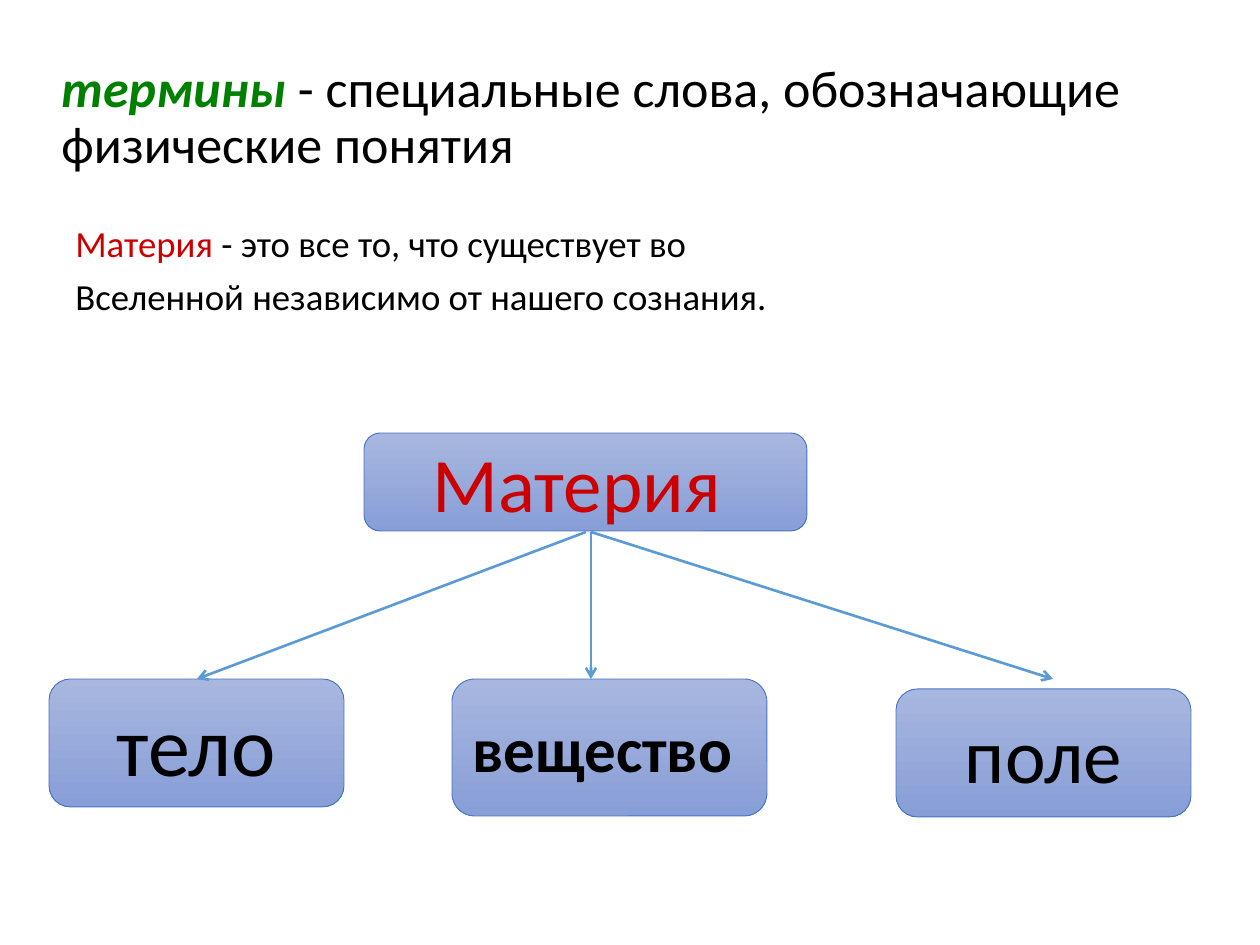
from lxml.etree import SubElement
from pptx import Presentation
from pptx.dml.color import RGBColor
from pptx.enum.shapes import MSO_CONNECTOR, MSO_SHAPE
from pptx.enum.text import MSO_ANCHOR, PP_ALIGN
from pptx.oxml.ns import qn
from pptx.util import Emu, Pt

PX = 914400 // 126
COLORS = {
    "black": "000000", "green": "008000", "red": "CC0000",
    "top": "A8B7DF", "bottom": "889ED7", "border": "4472C4", "arrow": "5B9BD5",
}

TITLE = [[("термины ", "green", True, True),
          ("- специальные слова, обозначающие физические понятия", "black", False, False)]]
BODY = [
    [("Материя", "red", False, False),
     (" - это все то, что существует во", "black", False, False)],
    [("Вселенной независимо от нашего сознания.", "black", False, False)],
]
BOXES = [
    ((364, 433, 443, 98), "Материя ", 44, "red", False, 6),
    ((49, 679, 295, 128), "тело", 48, "black", False, 0),
    ((452, 679, 315, 137), "вещество ", 36, "black", True, 0),
    ((896, 689, 295, 128), "поле", 44, "black", False, 0),
]
ARROWS = [
    ((586, 532), (197, 679)),
    ((591, 532), (1053, 679)),
    ((591, 532), (591, 679)),
]


def px(*values):
    return [Emu(v * PX) for v in values]


def rgb(name):
    return RGBColor.from_string(COLORS[name])


def write(sp, paragraphs, size, align=PP_ALIGN.LEFT, anchor=MSO_ANCHOR.TOP,
          line=1.0, before=0, after=0):
    tf = sp.text_frame
    tf.word_wrap = True
    tf.vertical_anchor = anchor
    for i, runs in enumerate(paragraphs):
        p = tf.add_paragraph() if i else tf.paragraphs[0]
        p.alignment = align
        p.line_spacing = line
        p.space_before, p.space_after = Pt(before), Pt(after)
        for text, color, bold, italic in runs:
            r = p.add_run()
            r.text = text
            r.font.name, r.font.size = "Calibri", Pt(size)
            r.font.bold, r.font.italic = bold, italic
            r.font.color.rgb = rgb(color)


def add_box(s, at, text, size, color, bold, gap):
    sp = s.shapes.add_shape(MSO_SHAPE.ROUNDED_RECTANGLE, *px(*at))
    sp.shadow.inherit = False
    sp.fill.gradient()
    sp.fill.gradient_angle = 270
    for stop, name in zip(sp.fill.gradient_stops, ("top", "bottom")):
        stop.color.rgb = rgb(name)
    sp.line.color.rgb = rgb("border")
    sp.line.width = Pt(0.5)
    write(sp, [[(text, color, bold, False)]], size, align=PP_ALIGN.CENTER,
          anchor=MSO_ANCHOR.MIDDLE, before=gap, after=gap)


def add_arrow(s, start, end):
    c = s.shapes.add_connector(MSO_CONNECTOR.STRAIGHT, *px(*start, *end))
    c.line.color.rgb = rgb("arrow")
    c.line.width = Pt(1.5)
    SubElement(c.line._get_or_add_ln(), qn("a:tailEnd"), type="arrow")
    SubElement(c._element.spPr, qn("a:effectLst"))


def main():
    prs = Presentation()
    prs.slide_width, prs.slide_height = px(1260, 945)
    s = prs.slides.add_slide(prs.slide_layouts[6])
    write(s.shapes.add_textbox(*px(49, 56, 1134, 130)), TITLE, 29.7, line=0.9)
    write(s.shapes.add_textbox(*px(63, 220, 1134, 110)), BODY, 21, line=0.9, before=7.5)
    for box in BOXES:
        add_box(s, *box)
    for start, end in ARROWS:
        add_arrow(s, start, end)
    prs.save("out.pptx")


if __name__ == "__main__":
    main()
